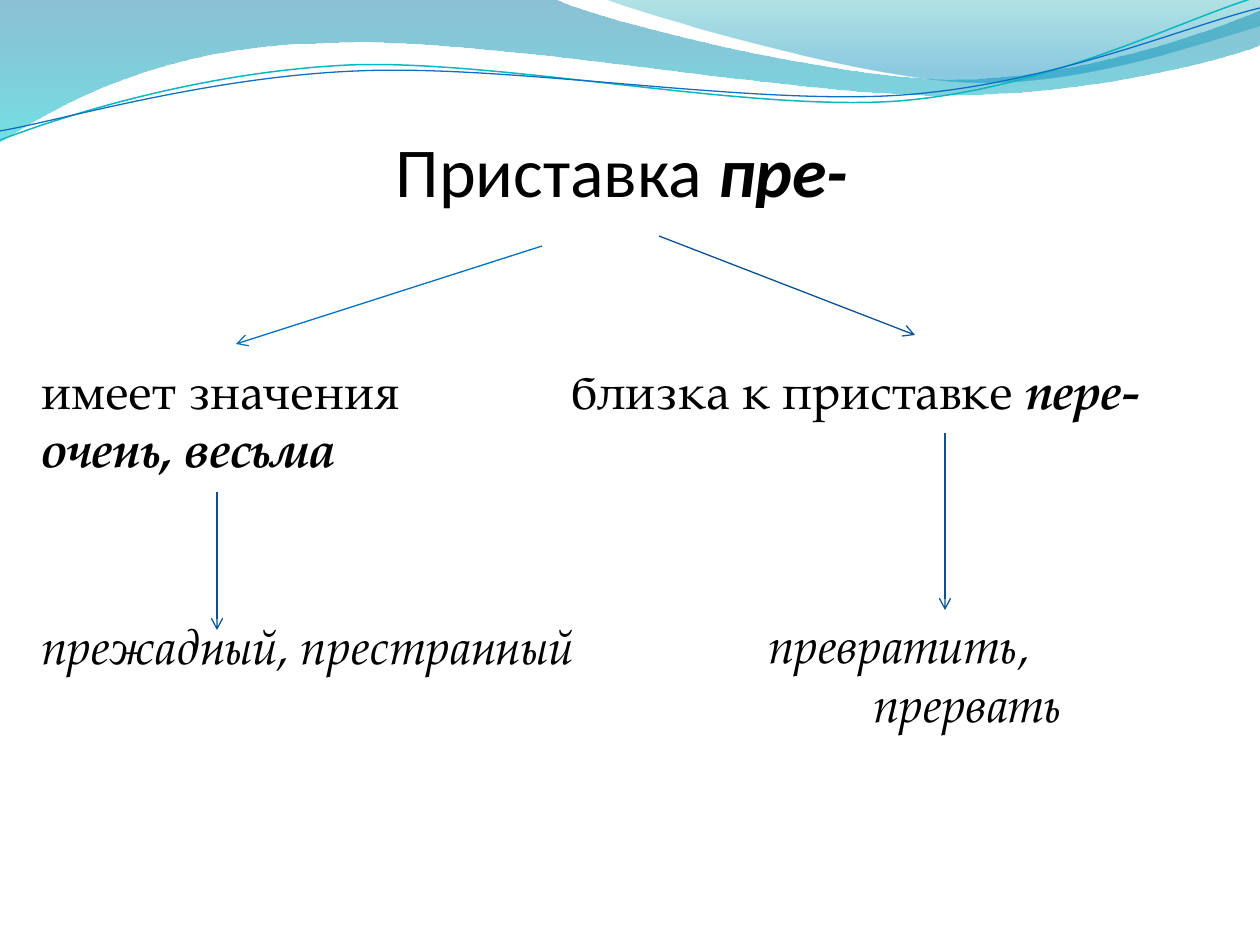
from lxml import etree
from pptx import Presentation
from pptx import util as u
from pptx.dml.color import RGBColor
from pptx.enum import shapes, text
from pptx.oxml.ns import qn

SCALE = 914400 / 126
THEME = {
    "ink": "000000", "teal": "0AB8BF", "blue": "0F6FC6",
    "arrow": "095295", "bright_arrow": "0070C0",
    "heading_font": "Calibri", "body_font": "TeX Gyre Pagella",
    "heading_size": 40, "body_size": 28,
}


def px(length):
    return u.Emu(round(length * SCALE))


def draw_curve(slide, start, steps, close):
    builder = slide.shapes.build_freeform(*map(px, start), scale=1.0)
    for step in steps:
        points = [(px(x), px(y)) for x, y in zip(step[::2], step[1::2])]
        builder.add_line_segments(points, close=False)
    if close:
        builder.add_line_segments([], close=True)
    curve = builder.convert_to_shape()
    segments = iter(list(curve.element.iter(qn("a:lnTo"))))
    for step in steps:
        group = [next(segments) for _ in step[::2]]
        if len(group) == 3:
            bezier = etree.Element(qn("a:cubicBezTo"))
            group[0].addprevious(bezier)
            for segment in group:
                bezier.append(segment[0])
                segment.getparent().remove(segment)
    curve.shadow.inherit = False
    return curve


prs = Presentation()
prs.slide_width, prs.slide_height = px(1260), px(945)
slide = prs.slides.add_slide(prs.slide_layouts[3])
heading, intensity, kinship = slide.placeholders

bands = [
    ((0, 0), [(554, -1), (600, 21, 837, 79, 955, 79), (1075, 79, 1207, 33, 1260, 11),
              (1261, 45), (1239, 55, 1096, 96, 940, 95), (784, 95, 481, 35, 324, 43),
              (163, 45, 58, 105, -1, 142)],
     [(0, "0074A1", 45), (1, "00C6CF", 55)]),
    ((604, -1), [(641, 14, 859, 78, 969, 82), (1079, 87, 1211, 40, 1260, 26), (1260, 0)],
     [(0, "00A1A9", 30), (0.8, "008BBF", 45)]),
]
for start, steps, stops in bands:
    band = draw_curve(slide, start, steps, True)
    band.line.fill.background()
    band.fill.gradient()
    band.fill.gradient_angle = 270
    for stop, (position, color, _) in zip(band.fill.gradient_stops, stops):
        stop.position = position
        stop.color.rgb = RGBColor.from_string(color)
    for tint, (_, _, opacity) in zip(band.element.spPr.iter(qn("a:srgbClr")), stops):
        etree.SubElement(tint, qn("a:alpha")).set("val", str(opacity * 1000))

waves = [
    ((0, 140), [(60, 117, 199, 72, 349, 65), (498, 59, 747, 112, 898, 101),
                (1050, 89, 1182, 19, 1257, -3)], "teal", 0.85),
    ((0, 131), [(59, 121, 207, 77, 357, 71), (508, 64, 752, 106, 903, 95),
                (1053, 84, 1186, 26, 1260, 8)], "blue", 0.75),
]
for start, steps, color, weight in waves:
    wave = draw_curve(slide, start, steps, False)
    wave.fill.background()
    wave.line.color.rgb = RGBColor.from_string(THEME[color])
    wave.line.width = u.Pt(weight)

BODY_FRAME = {"margin_left": px(12), "margin_top": px(133), "margin_right": 0,
              "margin_bottom": px(6), "vertical_anchor": text.MSO_ANCHOR.TOP}
frames = [
    (heading, (63, 97, 1134, 198),
     {"margin_left": 0, "margin_top": px(6), "margin_right": px(16),
      "margin_bottom": px(83), "vertical_anchor": text.MSO_ANCHOR.BOTTOM}),
    (intensity, (29, 227, 560, 645), BODY_FRAME),
    (kinship, (559, 227, 701, 645), BODY_FRAME),
]
for holder, (left, top, width, height), settings in frames:
    holder.left, holder.top, holder.width, holder.height = map(px, (left, top, width, height))
    for name, value in settings.items():
        setattr(holder.text_frame, name, value)
    holder.text_frame.word_wrap = True
    holder.text_frame.auto_size = text.MSO_AUTO_SIZE.NONE
    slide.shapes.element.append(holder.element)

PLAIN = {"bold": False, "italic": False}
ITALIC = {"bold": False, "italic": True}
STRONG = {"bold": True, "italic": True}
lines = [
    (heading, "heading", 0, 0, [("Приставка ", PLAIN), ("пре-", STRONG)]),
    (intensity, "body", 0, 0, [("имеет значения", PLAIN)]),
    (intensity, "body", 0, 0, [("очень, весьма", STRONG)]),
    (intensity, "body", 0, 79, [("прежадный, престранный", ITALIC)]),
    (kinship, "body", 0, 0, [("близка к приставке ", PLAIN), ("пере-", STRONG)]),
    (kinship, "body", 197, 112, [("превратить,", ITALIC)]),
    (kinship, "body", 302, 0, [("прервать", ITALIC)]),
]
for holder, role, indent, gap, runs in lines:
    frame = holder.text_frame
    paragraph = frame.add_paragraph() if frame.text else frame.paragraphs[0]
    paragraph.space_before = u.Pt(gap)
    props = paragraph._p.get_or_add_pPr()
    props.set("marL", str(px(indent)))
    props.set("indent", "0")
    etree.SubElement(props, qn("a:buNone"))
    paragraph.alignment = text.PP_ALIGN.CENTER if role == "heading" else text.PP_ALIGN.LEFT
    for words, style in runs:
        run = paragraph.add_run()
        run.text = words
        run.font.name = THEME[role + "_font"]
        run.font.size = u.Pt(THEME[role + "_size"])
        run.font.color.rgb = RGBColor.from_string(THEME["ink"])
        for name, value in style.items():
            setattr(run.font, name, value)

arrows = [
    ((542, 246), (236, 344), "bright_arrow"),
    ((659, 236), (915, 335), "arrow"),
    ((217, 492), (217, 630), "arrow"),
    ((945, 433), (945, 610), "arrow"),
]
for start, end, color in arrows:
    arrow = slide.shapes.add_connector(shapes.MSO_CONNECTOR.STRAIGHT,
                                       *map(px, start + end))
    arrow.line.color.rgb = RGBColor.from_string(THEME[color])
    arrow.line.width = u.Pt(0.75)
    etree.SubElement(arrow.line._get_or_add_ln(), qn("a:tailEnd"), type="arrow")
    etree.SubElement(arrow.element.spPr, qn("a:effectLst"))

prs.save("out.pptx")
